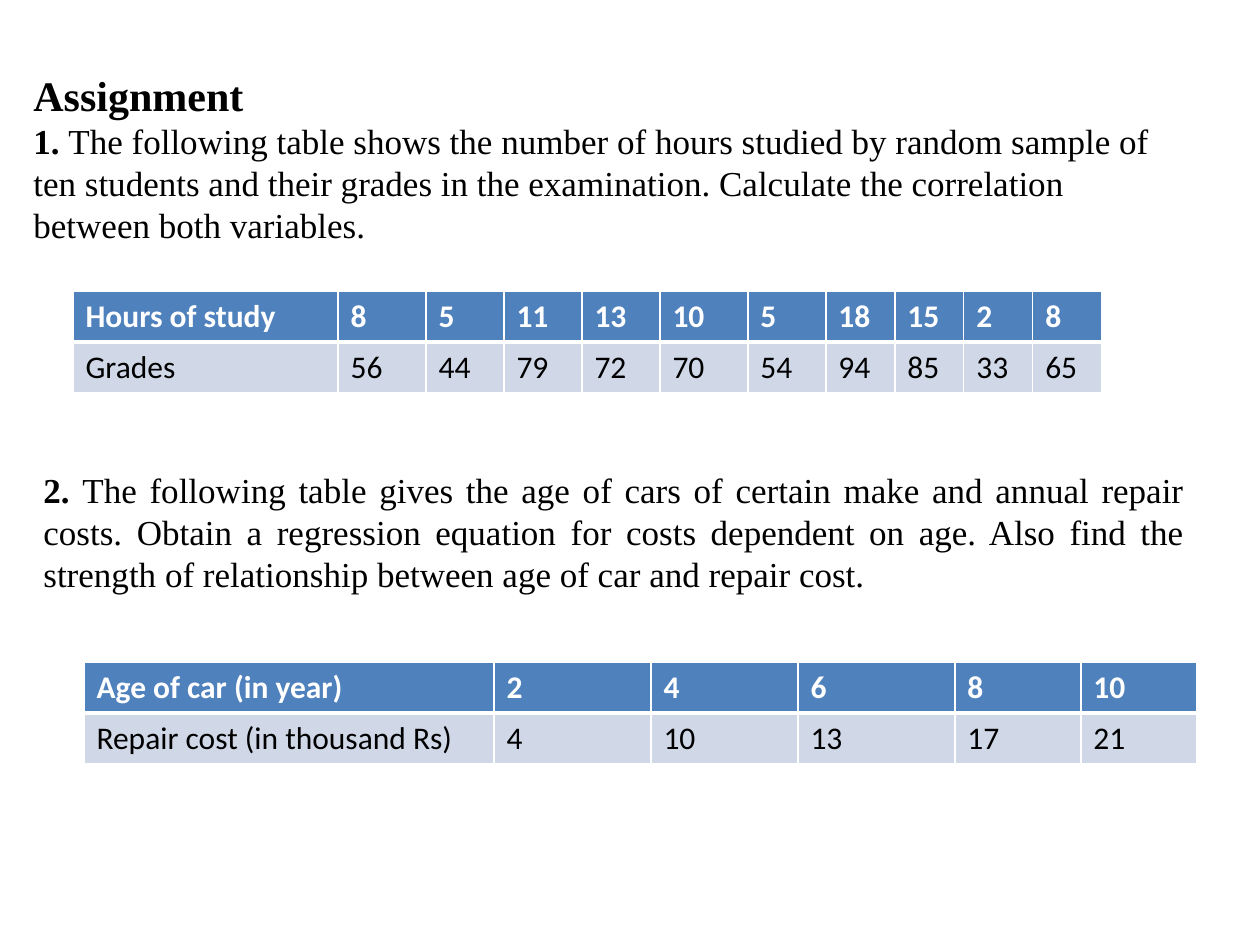
from lxml.etree import SubElement
from pptx import Presentation
from pptx.dml.color import RGBColor
from pptx.enum.text import PP_ALIGN
from pptx.oxml.ns import qn
from pptx.util import Pt

BLACK = RGBColor(0x00, 0x00, 0x00)
WHITE = RGBColor(0xFF, 0xFF, 0xFF)
BLUE = RGBColor(0x4F, 0x81, 0xBD)
PALE = RGBColor(0xD0, 0xD8, 0xE8)
SERIF = "Times New Roman"
SANS = "Calibri"


def px(count):
    return count * 914400 // 126


class Page:
    def __init__(self, deck):
        self.slide = deck.slides.add_slide(deck.slide_layouts[6])

    def style(self, font, color, **form):
        for key, value in form.items():
            setattr(font, key, value)
        font.color.rgb = color

    def text(self, left, top, width, height, paras, align):
        box = self.slide.shapes.add_textbox(px(left), px(top), px(width), px(height))
        frame = box.text_frame
        frame.word_wrap = True
        for index, runs in enumerate(paras):
            para = frame.paragraphs[0] if index == 0 else frame.add_paragraph()
            para.alignment = align
            for words, size, bold in runs:
                run = para.add_run()
                run.text = words
                self.style(run.font, BLACK, name=SERIF, size=Pt(size), bold=bold)

    def border(self, cell, widths):
        props = cell._tc.get_or_add_tcPr()
        for side, width in widths.items():
            line = SubElement(props, qn(f"a:ln{side}"), w=str(Pt(width)))
            fill = SubElement(line, qn("a:solidFill"))
            SubElement(fill, qn("a:srgbClr"), val=str(WHITE))

    def table(self, left, top, widths, height, rows):
        shape = self.slide.shapes.add_table(
            len(rows), len(widths), px(left), px(top), px(sum(widths)), px(height * len(rows))
        )
        grid = shape.table
        for column, width in zip(grid.columns, widths):
            column.width = px(width)
        for index, values in enumerate(rows):
            head = index == 0
            grid.rows[index].height = px(height)
            edges = {"L": 1, "R": 1, "T": 1 if head else 3, "B": 3 if head else 1}
            for cell, value in zip(grid.rows[index].cells, values):
                self.border(cell, edges)
                cell.fill.solid()
                cell.fill.fore_color.rgb = BLUE if head else PALE
                run = cell.text_frame.paragraphs[0].add_run()
                run.text = str(value)
                self.style(run.font, WHITE if head else BLACK, name=SANS, size=Pt(18), bold=head)


def main():
    deck = Presentation()
    deck.slide_width, deck.slide_height = px(1260), px(945)
    page = Page(deck)

    study = (
        "The following table shows the number of hours studied by random sample of "
        "ten students and their grades in the examination. Calculate the correlation "
        "between both variables."
    )
    repair = (
        "The following table gives the age of cars of certain make and annual repair "
        "costs. Obtain a regression equation for costs dependent on age. Also find the "
        "strength of relationship between age of car and repair cost."
    )
    page.text(
        21, 63, 1176, 233,
        [[("Assignment", 24, True)], [("1. ", 20, True), (study, 20, False)]],
        PP_ALIGN.LEFT,
    )
    page.table(
        73, 291, [265, 88, 78, 78, 78, 88, 78, 69, 69, 69, 69], 51,
        [
            ["Hours of study", 8, 5, 11, 13, 10, 5, 18, 15, 2, 8],
            ["Grades", 56, 44, 79, 72, 70, 54, 94, 85, 33, 65],
        ],
    )
    page.text(
        31, 462, 1166, 224,
        [[("2. ", 20, True), (repair, 20, False)]],
        PP_ALIGN.JUSTIFY,
    )
    page.table(
        84, 662, [410, 157, 147, 157, 126, 116], 51,
        [
            ["Age of car (in year)", 2, 4, 6, 8, 10],
            ["Repair cost (in thousand Rs)", 4, 10, 13, 17, 21],
        ],
    )
    deck.save("out.pptx")


if __name__ == "__main__":
    main()
